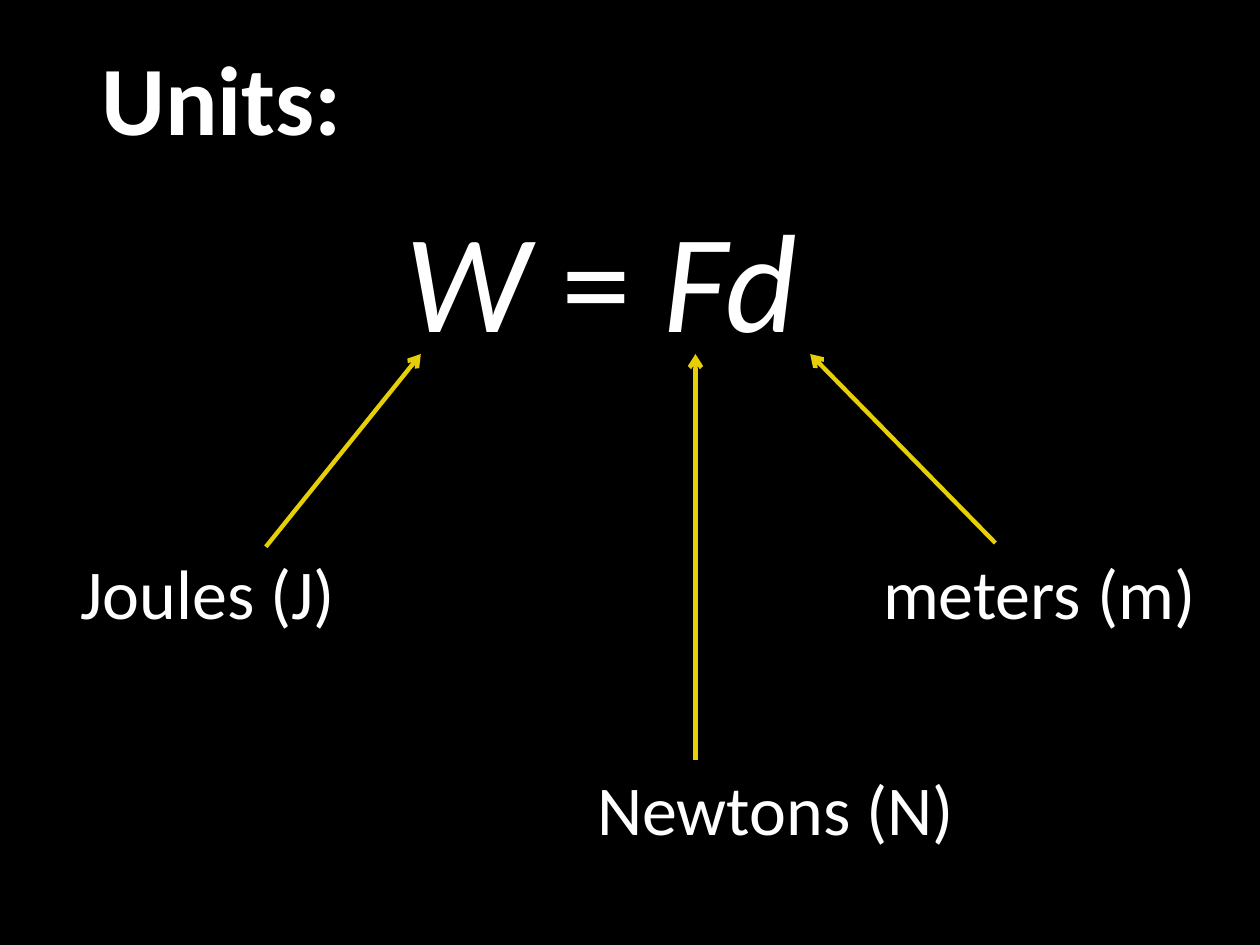
import pptx
import pptx.util
import pptx.dml.color
import pptx.enum.shapes
import pptx.enum.text
import pptx.oxml.ns
import lxml.etree
from pptx.util import Inches

WHITE = "FFFFFF"
YELLOW = "E7CF08"


def color(hex_string):
    return pptx.dml.color.RGBColor.from_string(hex_string)


def add_text(left, top, width, height, pieces, size, bold=False):
    """Add a one-paragraph box; pieces are (text, italic) pairs."""
    box = slide.shapes.add_textbox(Inches(left), Inches(top), Inches(width), Inches(height))
    box.text_frame.word_wrap = True
    para = box.text_frame.paragraphs[0]
    for text, italic in pieces:
        span = para.add_run()
        span.text = text
        span.font.name = "Calibri"
        span.font.size = pptx.util.Pt(size)
        span.font.bold = bold
        span.font.italic = italic
        span.font.color.rgb = color(WHITE)
    return box


deck = pptx.Presentation()
deck.slide_width = Inches(10)
deck.slide_height = Inches(7.5)
slide = deck.slides.add_slide(deck.slide_layouts[6])
slide.background.fill.solid()
slide.background.fill.fore_color.rgb = color("000000")

title = add_text(0.55, 0.12, 2.42, 1.29, [("Units:", False)], 56, bold=True)
title.text_frame.vertical_anchor = pptx.enum.text.MSO_ANCHOR.MIDDLE
title.text_frame.paragraphs[0].alignment = pptx.enum.text.PP_ALIGN.CENTER

add_text(3.12, 1.48, 8.29, 1.73, [("W", True), (" = ", False), ("Fd", True)], 80)

# Unit name, box left, top and width, then where its arrow starts and the x it points to
units = [
    ("meters (m)", 6.91, 4.31, 3.09, (7.9, 4.31), 6.43),
    ("Newtons (N)", 4.64, 6.03, 4.22, (5.52, 6.03), 5.52),
    ("Joules (J)", 0.54, 4.31, 4.22, (2.11, 4.34), 3.34),
]
arrow_tip_y = 2.81

for name, left, top, width, (start_x, start_y), tip_x in units:
    add_text(left, top, width, 0.77, [(name, False)], 40)
    arrow = slide.shapes.add_connector(
        pptx.enum.shapes.MSO_CONNECTOR.STRAIGHT,
        Inches(start_x), Inches(start_y), Inches(tip_x), Inches(arrow_tip_y))
    arrow.line.color.rgb = color(YELLOW)
    arrow.line.width = pptx.util.Pt(2.5)
    line = arrow.line._get_or_add_ln()
    lxml.etree.SubElement(line, pptx.oxml.ns.qn("a:tailEnd"), type="arrow")
    lxml.etree.SubElement(arrow._element.spPr, pptx.oxml.ns.qn("a:effectLst"))

deck.save("out.pptx")
